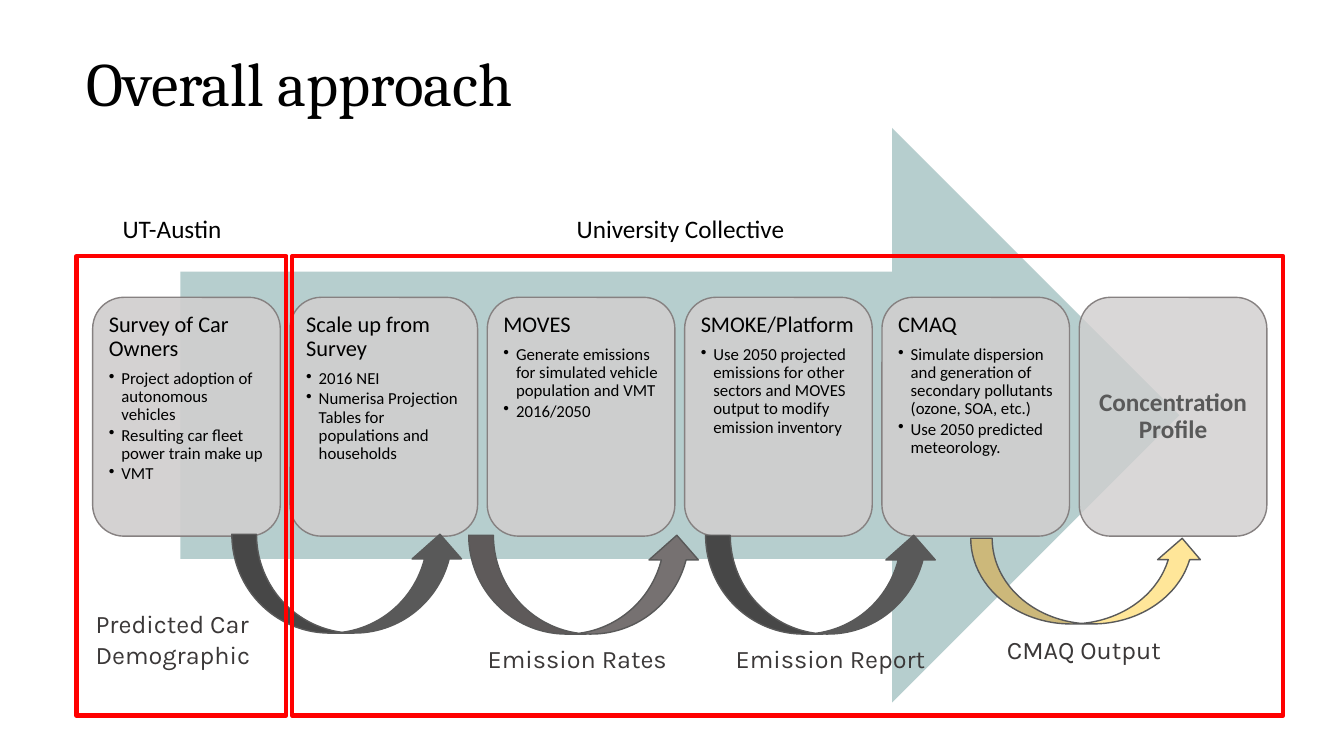
from pptx import Presentation
from pptx.dml.color import RGBColor
from pptx.enum.shapes import MSO_SHAPE
from pptx.enum.text import MSO_ANCHOR, PP_ALIGN
from pptx.oxml.ns import qn
from pptx.util import Pt
from lxml import etree

LEFT, CENTER = PP_ALIGN.LEFT, PP_ALIGN.CENTER
TOP, MIDDLE = MSO_ANCHOR.TOP, MSO_ANCHOR.MIDDLE
RECT, ROUND_RECT = MSO_SHAPE.RECTANGLE, MSO_SHAPE.ROUNDED_RECTANGLE
RIGHT_ARROW, CURVED_ARROW = MSO_SHAPE.RIGHT_ARROW, MSO_SHAPE.CURVED_UP_ARROW

# Content
TITLE = "Overall approach"
STEPS = [
    ("Survey of Car Owners", ["Project adoption of autonomous vehicles",
                              "Resulting car fleet power train make up", "VMT"]),
    ("Scale up from Survey", ["2016 NEI",
                              "Numerisa Projection Tables for populations and households"]),
    ("MOVES", ["Generate emissions for simulated vehicle population and VMT",
               "2016/2050"]),
    ("SMOKE/Platform", ["Use 2050 projected emissions for other sectors and "
                        "MOVES output to modify emission inventory"]),
    ("CMAQ", ["Simulate dispersion and generation of secondary pollutants "
              "(ozone, SOA, etc.)", "Use 2050 predicted meteorology."]),
]
RESULT = "Concentration Profile"
# Curved arrows: left, top, height, colour
HANDOVERS = [(165.6, 381.6, 70.6, "dark"), (334.8, 382.3, 70.6, "mid"),
             (504, 382.3, 70.6, "dark"), (693.4, 384.5, 61.2, "yellow")]
# Labels below the arrows: text, left, top, width, height
OUTPUTS = [("Predicted Car\nDemographic", 61.2, 431.3, 136.8, 51),
           ("Emission Rates", 341.3, 455.8, 154.8, 29),
           ("Emission Report", 518.4, 455.8, 166.3, 29),
           ("CMAQ Output", 712.1, 449.3, 166.3, 29)]
# Teams: name, name left, name width, frame left, frame width
TEAMS = [("UT-Austin", 77.8, 90, 54.7, 149.8),
         ("University Collective", 376.6, 218.9, 208.8, 707.8)]

THEME = {
    "arrow": "98BABA", "box": "D0CECE", "box_line": "868181",
    "dark": "595959", "mid": "767171", "yellow": "FFE699",
    "label": "3B3838", "text": "000000", "frame": "FF0000",
    "title_font": "Cambria", "body_font": "Calibri", "label_font": "Karla",
    "title_size": 44, "label_size": 18, "head_size": 16, "bullet_size": 12,
}

BOX_LEFT, BOX_TOP, BOX_W, BOX_H, BOX_PITCH = 66.2, 212.4, 134, 170.6, 140.94
BOX_INSET, BULLET_INDENT = 5, 9
HANDOVER_W = 166.3
FRAME_TOP, FRAME_H, TEAM_TOP = 182.9, 328.3, 149

prs = Presentation()
prs.slide_width, prs.slide_height = Pt(960), Pt(540)
s = prs.slides.add_slide(prs.slide_layouts[5])


def color(name):
    return RGBColor.from_string(THEME[name])


def add_shape(kind, x, y, w, h, fill=None, line=None, width=1, opacity=100):
    sp = s.shapes.add_shape(kind, Pt(x), Pt(y), Pt(w), Pt(h))
    sp.shadow.inherit = False
    if fill:
        sp.fill.solid()
        sp.fill.fore_color.rgb = color(fill)
        if opacity < 100:
            rgb = sp._element.spPr.find(qn("a:solidFill"))[0]
            etree.SubElement(rgb, qn("a:alpha")).set("val", str(opacity * 1000))
    else:
        sp.fill.background()
    if line:
        sp.line.color.rgb = color(line)
        sp.line.width = Pt(width)
    else:
        sp.line.fill.background()
    return sp


def style(p, font, size, ink, align=LEFT, bold=False):
    p.alignment = align
    for r in p.runs:
        r.font.name, r.font.size, r.font.bold = THEME[font], Pt(THEME[size]), bold
        r.font.color.rgb = color(ink)


def add_label(text, x, y, w, h, font, ink, align=LEFT):
    tf = s.shapes.add_textbox(Pt(x), Pt(y), Pt(w), Pt(h)).text_frame
    tf.word_wrap = True
    tf.text = text
    for p in tf.paragraphs:
        style(p, font, "label_size", ink, align)


def add_box(i, text, opacity, anchor):
    sp = add_shape(ROUND_RECT, BOX_LEFT + i * BOX_PITCH, BOX_TOP, BOX_W, BOX_H,
                   "box", "box_line", opacity=opacity)
    tf = sp.text_frame
    tf.word_wrap, tf.vertical_anchor = True, anchor
    tf.margin_left = tf.margin_right = tf.margin_top = tf.margin_bottom = Pt(BOX_INSET)
    tf.text = text
    for p in tf.paragraphs:
        p.line_spacing = 0.9
    return tf


def add_bullet(p):
    pPr = p._p.get_or_add_pPr()
    pPr.set("marL", str(Pt(BULLET_INDENT)))
    pPr.set("indent", str(-Pt(BULLET_INDENT)))
    etree.SubElement(pPr, qn("a:buChar")).set("char", "•")


# Title
title = s.shapes.title
title.left, title.top, title.width, title.height = Pt(54.7), Pt(9.4), Pt(869.8), Pt(104.4)
title.text_frame.text = TITLE
title.text_frame.vertical_anchor = MIDDLE
title.text_frame.paragraphs[0].line_spacing = 0.9
style(title.text_frame.paragraphs[0], "title_font", "title_size", "text")

# Large arrow behind the process
add_shape(RIGHT_ARROW, 128.9, 91.4, 713.5, 410.4, "arrow", opacity=70)

# Process steps
for i, (head, bullets) in enumerate(STEPS):
    tf = add_box(i, "\n".join([head] + bullets), 90, TOP)
    first, *rest = tf.paragraphs
    first.space_after = Pt(6)
    style(first, "body_font", "head_size", "text")
    for p in rest:
        p.space_after = Pt(1.5)
        style(p, "body_font", "bullet_size", "text")
        add_bullet(p)

# Final result
tf = add_box(len(STEPS), RESULT, 80, MIDDLE)
style(tf.paragraphs[0], "body_font", "label_size", "dark", CENTER, True)

# Arrows between steps and what they pass on
for x, y, h, fill in HANDOVERS:
    add_shape(CURVED_ARROW, x, y, HANDOVER_W, h, fill, "dark")
for text, x, y, w, h in OUTPUTS:
    add_label(text, x, y, w, h, "label_font", "label")

# Team frames and names
for name, x, w, frame_x, frame_w in TEAMS:
    add_shape(RECT, frame_x, FRAME_TOP, frame_w, FRAME_H, line="frame", width=3)
    add_label(name, x, TEAM_TOP, w, 29, "body_font", "text", CENTER)

prs.save("out.pptx")
